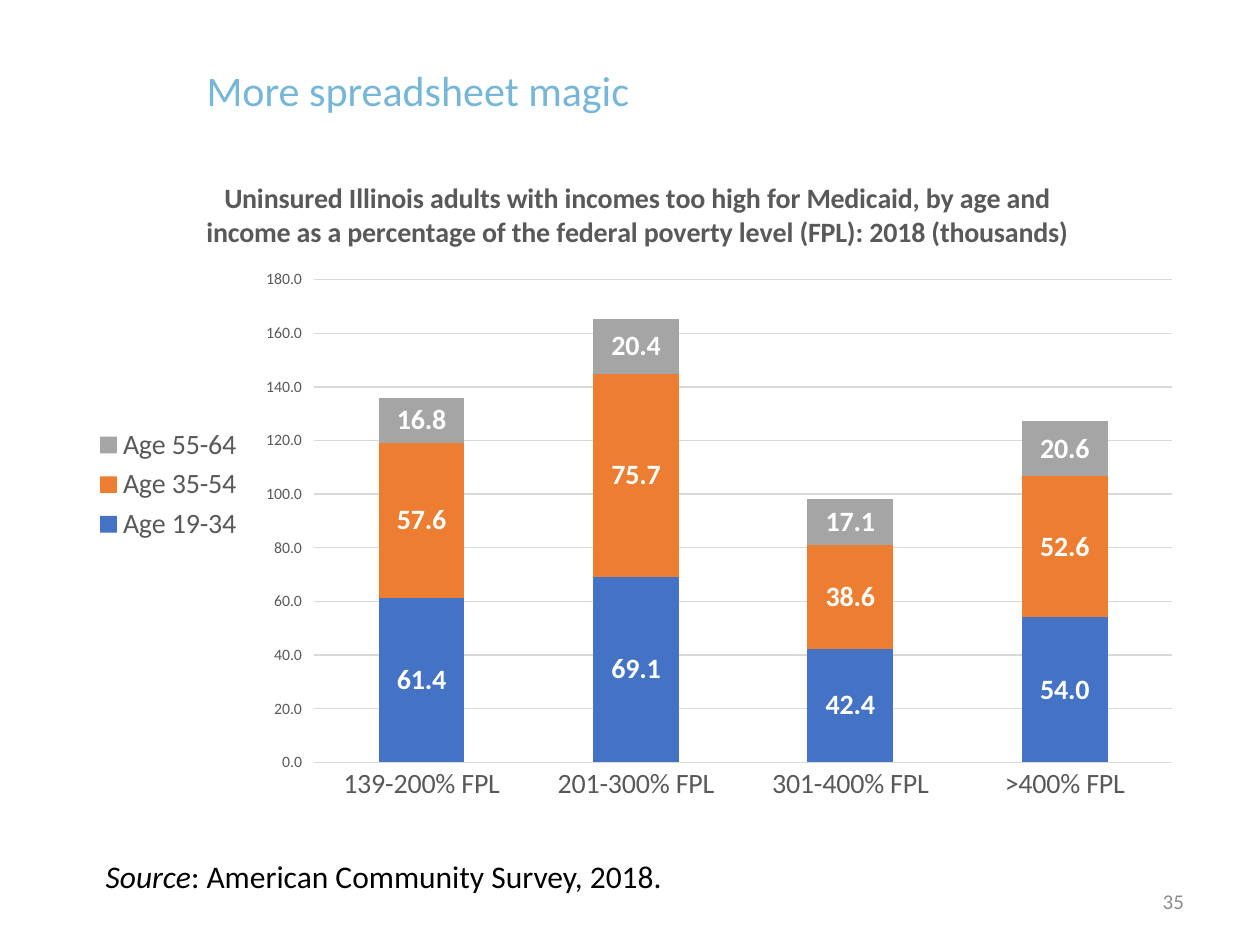
"""Build a slide with a stacked column chart of uninsured Illinois adults."""
from dataclasses import dataclass

from lxml.etree import SubElement
from pptx import Presentation
from pptx.chart.data import CategoryChartData
from pptx.dml.color import RGBColor
from pptx.enum.chart import XL_CHART_TYPE, XL_LABEL_POSITION, XL_LEGEND_POSITION, XL_TICK_MARK
from pptx.enum.text import MSO_ANCHOR, MSO_AUTO_SIZE, PP_ALIGN
from pptx.oxml.ns import qn
from pptx.util import Pt


@dataclass(frozen=True)
class Theme:
    font: str = "Calibri"
    title: str = "76B6D7"
    ink: str = "000000"
    muted: str = "595959"
    number: str = "8C8C8C"
    grid: str = "D9D9D9"
    white: str = "FFFFFF"
    title_size: float = 24
    source_size: float = 18
    chart_size: float = 16
    number_size: float = 12
    axis_size: float = 9


@dataclass(frozen=True)
class AgeGroup:
    name: str
    values: tuple[float, ...]
    color: str


@dataclass(frozen=True)
class Box:
    left: float
    top: float
    width: float
    height: float

    def lengths(self) -> tuple[Pt, ...]:
        return Pt(self.left), Pt(self.top), Pt(self.width), Pt(self.height)


THEME = Theme()
INCOMES = ("139-200% FPL", "201-300% FPL", "301-400% FPL", ">400% FPL")
AGE_GROUPS = (
    AgeGroup("Age 19-34", (61.4, 69.1, 42.4, 54.0), "4472C4"),
    AgeGroup("Age 35-54", (57.6, 75.7, 38.6, 52.6), "ED7D31"),
    AgeGroup("Age 55-64", (16.8, 20.4, 17.1, 20.6), "A5A5A5"),
)
CHART_TITLE = (
    "Uninsured Illinois adults with incomes too high for Medicaid, by age and "
    "income as a percentage of the federal poverty level (FPL): 2018 (thousands)"
)
PLOT_LAYOUT = {"x": 0.21, "y": 0.19, "w": 0.77, "h": 0.73}


def set_font(font, *, size: float, color: str, bold: bool = False, italic: bool = False) -> None:
    font.name = THEME.font
    font.size = Pt(size)
    font.bold = bold
    font.italic = italic
    font.color.rgb = RGBColor.from_string(color)


def add_text(p, text: str, **fmt) -> None:
    r = p.add_run()
    r.text = text
    set_font(r.font, **fmt)


def add_box(slide, box: Box, *, anchor=MSO_ANCHOR.MIDDLE, wrap: bool = True):
    tf = slide.shapes.add_textbox(*box.lengths()).text_frame
    tf.word_wrap = wrap
    tf.vertical_anchor = anchor
    return tf


def set_line(line) -> None:
    line.color.rgb = RGBColor.from_string(THEME.grid)
    line.width = Pt(0.75)


def set_plot_layout(chart) -> None:
    area = chart._chartSpace.chart.plotArea
    for old in area.findall(qn("c:layout")):
        area.remove(old)
    manual = SubElement(SubElement(area, qn("c:layout")), qn("c:manualLayout"))
    area.insert(0, manual.getparent())
    settings = {"layoutTarget": "inner", "xMode": "edge", "yMode": "edge", **PLOT_LAYOUT}
    for tag, value in settings.items():
        SubElement(manual, qn(f"c:{tag}")).set("val", str(value))


def style_axes(chart) -> None:
    cat = chart.category_axis
    cat.major_tick_mark = XL_TICK_MARK.NONE
    set_line(cat.format.line)
    set_font(cat.tick_labels.font, size=THEME.chart_size, color=THEME.muted)
    val = chart.value_axis
    val.minimum_scale, val.maximum_scale, val.major_unit = 0, 180, 20
    val.format.line.fill.background()
    set_line(val.major_gridlines.format.line)
    set_font(val.tick_labels.font, size=THEME.axis_size, color=THEME.muted)
    val.tick_labels.number_format = "0.0"
    val.tick_labels.number_format_is_linked = False


def style_series(series, group: AgeGroup) -> None:
    series.format.fill.solid()
    series.format.fill.fore_color.rgb = RGBColor.from_string(group.color)
    labels = series.data_labels
    labels.show_value = True
    labels.position = XL_LABEL_POSITION.CENTER
    labels.number_format = "0.0"
    labels.number_format_is_linked = False
    set_font(labels.font, size=THEME.chart_size, color=THEME.white, bold=True)


def add_age_chart(slide, box: Box) -> None:
    data = CategoryChartData(number_format="0.0")
    data.categories = INCOMES
    for group in AGE_GROUPS:
        data.add_series(group.name, group.values)
    chart = slide.shapes.add_chart(XL_CHART_TYPE.COLUMN_STACKED, *box.lengths(), data).chart
    set_font(chart.font, size=10, color=THEME.ink)
    chart.has_title = True
    add_text(chart.chart_title.text_frame.paragraphs[0], CHART_TITLE,
             size=THEME.chart_size, color=THEME.muted, bold=True)
    chart.chart_title.include_in_layout = False
    chart.has_legend = True
    chart.legend.position = XL_LEGEND_POSITION.LEFT
    chart.legend.include_in_layout = False
    set_font(chart.legend.font, size=THEME.chart_size, color=THEME.muted)
    plot = chart.plots[0]
    plot.gap_width, plot.overlap, plot.vary_by_categories = 150, 100, False
    for series, group in zip(plot.series, AGE_GROUPS):
        style_series(series, group)
    style_axes(chart)
    set_plot_layout(chart)


def main() -> None:
    prs = Presentation()
    prs.slide_width, prs.slide_height = Pt(720), Pt(540)
    slide = prs.slides.add_slide(prs.slide_layouts[6])

    p = add_box(slide, Box(111, 18.7, 571.7, 69)).paragraphs[0]
    p.line_spacing = 0.9
    add_text(p, "More spreadsheet magic", size=THEME.title_size, color=THEME.title)

    p = add_box(slide, Box(650, 500.5, 41, 29)).paragraphs[0]
    p.alignment = PP_ALIGN.CENTER
    add_text(p, "35", size=THEME.number_size, color=THEME.number)

    add_age_chart(slide, Box(46, 88, 636.5, 378))

    tf = add_box(slide, Box(53.3, 486, 337, 29), anchor=MSO_ANCHOR.TOP, wrap=False)
    tf.auto_size = MSO_AUTO_SIZE.SHAPE_TO_FIT_TEXT
    p = tf.paragraphs[0]
    add_text(p, "Source", size=THEME.source_size, color=THEME.ink, italic=True)
    add_text(p, ": American Community Survey, 2018.", size=THEME.source_size, color=THEME.ink)

    prs.save("out.pptx")


if __name__ == "__main__":
    main()
